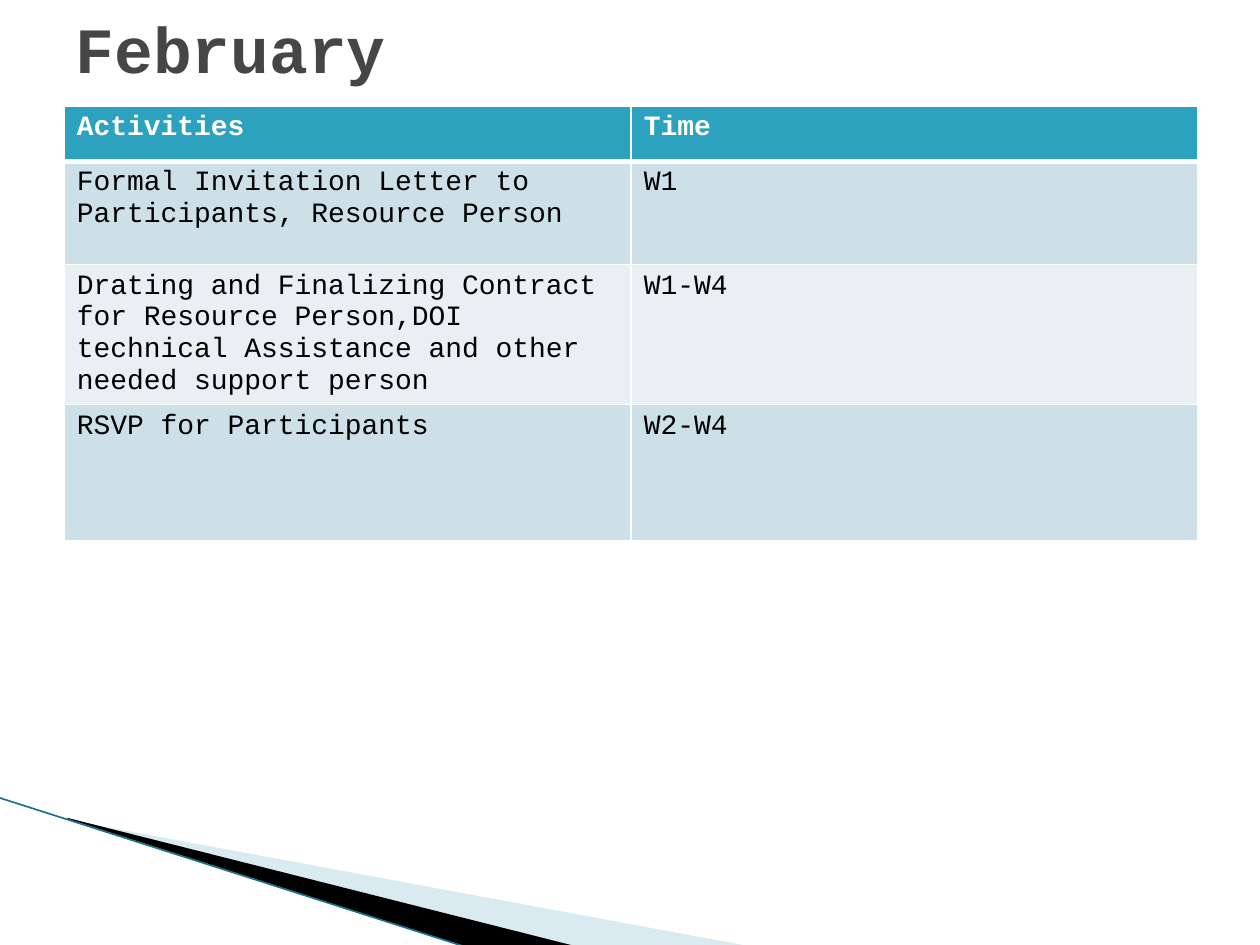
from dataclasses import dataclass

from lxml import etree
from pptx import Presentation
from pptx.dml.color import RGBColor
from pptx.enum import shapes, text
from pptx.oxml import ns
from pptx.util import Inches, Pt

FONT = "Courier New"
WHITE, BLACK = "FFFFFF", "000000"


@dataclass
class Wedge:
    points: list[tuple[float, float]]
    color: str
    opacity: int = 100


@dataclass
class TableRow:
    activity: str
    time: str
    height: float
    fill: str
    color: str = BLACK
    bold: bool = False
    bottom_border: float = 1


WEDGES = [
    Wedge([(0.55, 6.51), (5.95, 7.51), (4.56, 7.51), (0.55, 6.5)], "A0CBDC", 40),
    Wedge([(0.53, 6.49), (4.57, 7.51), (3.72, 7.52), (0.54, 6.5)], BLACK),
]
ROWS = [
    TableRow("Activities", "Time", 0.44, "2DA2BF", WHITE, True, 3),
    TableRow("Formal Invitation Letter to Participants, Resource Person",
             "W1", 0.82, "CDE0E8"),
    TableRow("Drating and Finalizing Contract for Resource Person,DOI technical "
             "Assistance and other needed support person", "W1-W4", 1.11, "E8F0F4"),
    TableRow("RSVP for Participants", "W2-W4", 1.08, "CDE0E8"),
]


def rgb(color: str) -> RGBColor:
    return RGBColor.from_string(color)


def style_font(font, size: float, color: str, bold: bool) -> None:
    font.name, font.size, font.bold = FONT, Pt(size), bold
    font.color.rgb = rgb(color)


def draw_wedge(slide, wedge: Wedge) -> None:
    start, *others = [(Inches(x), Inches(y)) for x, y in wedge.points]
    builder = slide.shapes.build_freeform(*start)
    builder.add_line_segments(others, close=True)
    shape = builder.convert_to_shape()
    shape.shadow.inherit = False
    shape.line.fill.background()
    shape.fill.solid()
    shape.fill.fore_color.rgb = rgb(wedge.color)
    if wedge.opacity < 100:
        color = shape._element.spPr.find(".//" + ns.qn("a:srgbClr"))
        etree.SubElement(color, ns.qn("a:alpha"), val=str(wedge.opacity * 1000))


def set_borders(cell, top: float, bottom: float) -> None:
    properties = cell._tc.get_or_add_tcPr()
    widths = {"lnL": 1, "lnR": 1, "lnT": top, "lnB": bottom}
    for index, (side, width) in enumerate(widths.items()):
        line = etree.Element(ns.qn(f"a:{side}"), w=str(Pt(width)))
        fill = etree.SubElement(line, ns.qn("a:solidFill"))
        etree.SubElement(fill, ns.qn("a:srgbClr"), val=WHITE)
        properties.insert(index, line)


def draw_table(slide, rows: list[TableRow]) -> None:
    height = sum(row.height for row in rows)
    frame = slide.shapes.add_table(len(rows), 2, Inches(0.51), Inches(0.84),
                                   Inches(9), Inches(height))
    table = frame.table
    top_border = 1
    for index, row in enumerate(rows):
        table.rows[index].height = Inches(row.height)
        for column, words in enumerate((row.activity, row.time)):
            cell = table.cell(index, column)
            cell.text = words
            style_font(cell.text_frame.paragraphs[0].font, 16, row.color, row.bold)
            cell.fill.solid()
            cell.fill.fore_color.rgb = rgb(row.fill)
            set_borders(cell, top_border, row.bottom_border)
        top_border = row.bottom_border


def main() -> None:
    deck = Presentation()
    deck.slide_width, deck.slide_height = Inches(10), Inches(7.5)
    slide = deck.slides.add_slide(deck.slide_layouts[5])

    # Corner decoration
    for wedge in WEDGES:
        draw_wedge(slide, wedge)
    edge = slide.shapes.add_connector(shapes.MSO_CONNECTOR.STRAIGHT, Inches(-0.01),
                                      Inches(6.33), Inches(3.71), Inches(7.52))
    edge.line.color.rgb = rgb("1B7587")
    edge.line.width = Pt(0.95)
    etree.SubElement(edge._element.spPr, ns.qn("a:effectLst"))

    # Title
    title = slide.shapes.title
    title.left, title.top = Inches(0.5), Inches(0)
    title.width, title.height = Inches(9), Inches(0.75)
    title.text_frame.text = "February"
    title.text_frame.vertical_anchor = text.MSO_ANCHOR.MIDDLE
    heading = title.text_frame.paragraphs[0]
    heading.alignment = text.PP_ALIGN.LEFT
    style_font(heading.font, 36.9, "464646", True)

    # Schedule
    draw_table(slide, ROWS)
    deck.save("out.pptx")


if __name__ == "__main__":
    main()
